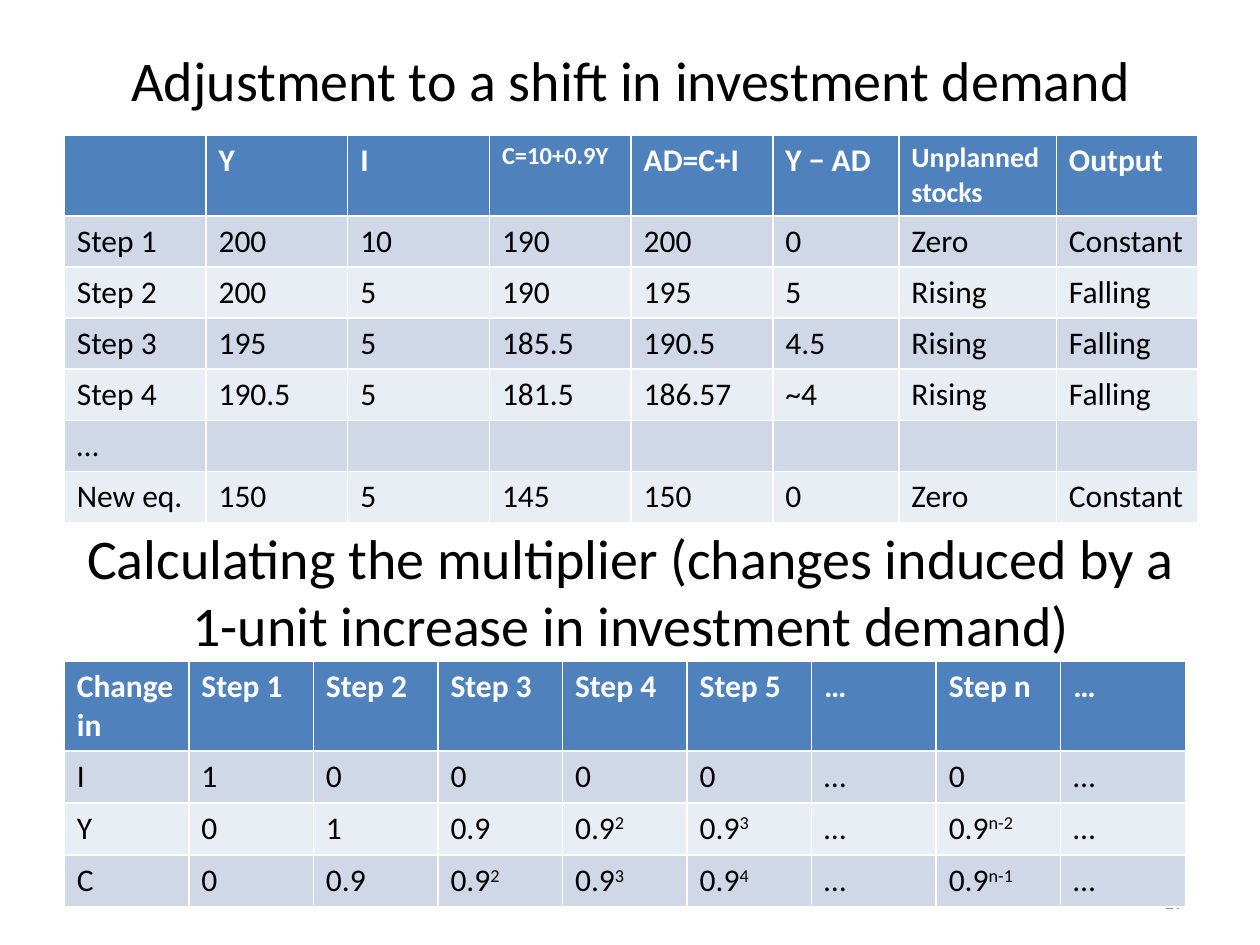
import pptx
import pptx.dml.color
import pptx.enum.text
import pptx.util

Inches = pptx.util.Inches
RGBColor = pptx.dml.color.RGBColor
Align = pptx.enum.text.PP_ALIGN

BLACK = RGBColor(0x00, 0x00, 0x00)
WHITE = RGBColor(0xFF, 0xFF, 0xFF)
GREY = RGBColor(0x8C, 0x8C, 0x8C)
HEADER_BLUE = RGBColor(0x4F, 0x81, 0xBD)
BANDS = (RGBColor(0xD0, 0xD8, 0xE8), RGBColor(0xE9, 0xED, 0xF4))

LEFT = 0.51
WIDTH = 9

ADJUSTMENT = [
    ["", "Y", "I", "C=10+0.9Y", "AD=C+I", "Y − AD", "Unplanned stocks", "Output"],
    ["Step 1", "200", "10", "190", "200", "0", "Zero", "Constant"],
    ["Step 2", "200", "5", "190", "195", "5", "Rising", "Falling"],
    ["Step 3", "195", "5", "185.5", "190.5", "4.5", "Rising", "Falling"],
    ["Step 4", "190.5", "5", "181.5", "186.57", "~4", "Rising", "Falling"],
    ["…", "", "", "", "", "", "", ""],
    ["New eq.", "150", "5", "145", "150", "0", "Zero", "Constant"],
]
MULTIPLIER = [
    ["Change in", "Step 1", "Step 2", "Step 3", "Step 4", "Step 5", "…", "Step n", "…"],
    ["I", "1", "0", "0", "0", "0", "…", "0", "…"],
    ["Y", "0", "1", "0.9", "0.9^2", "0.9^3", "…", "0.9^n-2", "…"],
    ["C", "0", "0.9", "0.9^2", "0.9^3", "0.9^4", "…", "0.9^n-1", "…"],
]
SMALL_HEADERS = {"C=10+0.9Y": 14, "Unplanned stocks": 16}


def write(frame, text, size=18, color=BLACK, bold=False, align=Align.LEFT):
    """Write one paragraph; what follows a ^ is superscript."""
    paragraph = frame.paragraphs[0]
    paragraph.alignment = align
    for index, part in enumerate(text.split("^")):
        run = paragraph.add_run()
        run.text = part
        run.font.name = "Calibri"
        run.font.size = pptx.util.Pt(size)
        run.font.bold = bold
        run.font.color.rgb = color
        if index:
            run.font._element.set("baseline", "30000")


def place(shape, left, top, width, height):
    shape.left, shape.top = Inches(left), Inches(top)
    shape.width, shape.height = Inches(width), Inches(height)


def set_middle(frame):
    frame.word_wrap = True
    frame.auto_size = pptx.enum.text.MSO_AUTO_SIZE.NONE
    frame.vertical_anchor = pptx.enum.text.MSO_ANCHOR.MIDDLE


def add_title(slide, text, top):
    title = slide.shapes.title
    place(title, LEFT, top, WIDTH, 1.25)
    set_middle(title.text_frame)
    write(title.text_frame, text, size=32, align=Align.CENTER)


def add_text(slide, text, left, top, width, height, **text_format):
    box = slide.shapes.add_textbox(
        Inches(left), Inches(top), Inches(width), Inches(height))
    set_middle(box.text_frame)
    write(box.text_frame, text, **text_format)


def add_banded_table(slide, rows, top, column_widths, height, header_height):
    table = slide.shapes.add_table(
        len(rows), len(rows[0]), Inches(LEFT), Inches(top),
        Inches(sum(column_widths)), Inches(height)).table
    for column, width in zip(table.columns, column_widths):
        column.width = Inches(width)
    body_height = (height - header_height) / (len(rows) - 1)
    for r, values in enumerate(rows):
        is_header = r == 0
        table.rows[r].height = Inches(header_height if is_header else body_height)
        for c, value in enumerate(values):
            cell = table.cell(r, c)
            cell.fill.solid()
            cell.fill.fore_color.rgb = HEADER_BLUE if is_header else BANDS[(r - 1) % 2]
            if value:
                write(cell.text_frame, value, size=SMALL_HEADERS.get(value, 18),
                      color=WHITE if is_header else BLACK, bold=is_header)


def main():
    deck = pptx.Presentation()
    deck.slide_width, deck.slide_height = Inches(10), Inches(7.5)
    slide = deck.slides.add_slide(deck.slide_layouts[5])

    add_title(slide, "Adjustment to a shift in investment demand", top=0)
    balance_width, stocks_width = 1, 1.25
    regular_width = (WIDTH - balance_width - stocks_width) / 6
    add_banded_table(
        slide, ADJUSTMENT, top=1.07, height=3.07, header_height=0.64,
        column_widths=[regular_width] * 5 + [balance_width, stocks_width, regular_width])

    add_text(slide, "19", 7.17, 6.95, 2.33, 0.4,
             size=12, color=GREY, align=Align.RIGHT)
    add_banded_table(slide, MULTIPLIER, top=5.25, height=1.94, header_height=0.7,
                     column_widths=[8.9 / 9] * 9)
    add_text(slide,
             "Calculating the multiplier (changes induced by a "
             "1-unit increase in investment demand)",
             LEFT, 4.06, WIDTH, 1.25, size=32, align=Align.CENTER)

    deck.save("out.pptx")


if __name__ == "__main__":
    main()
